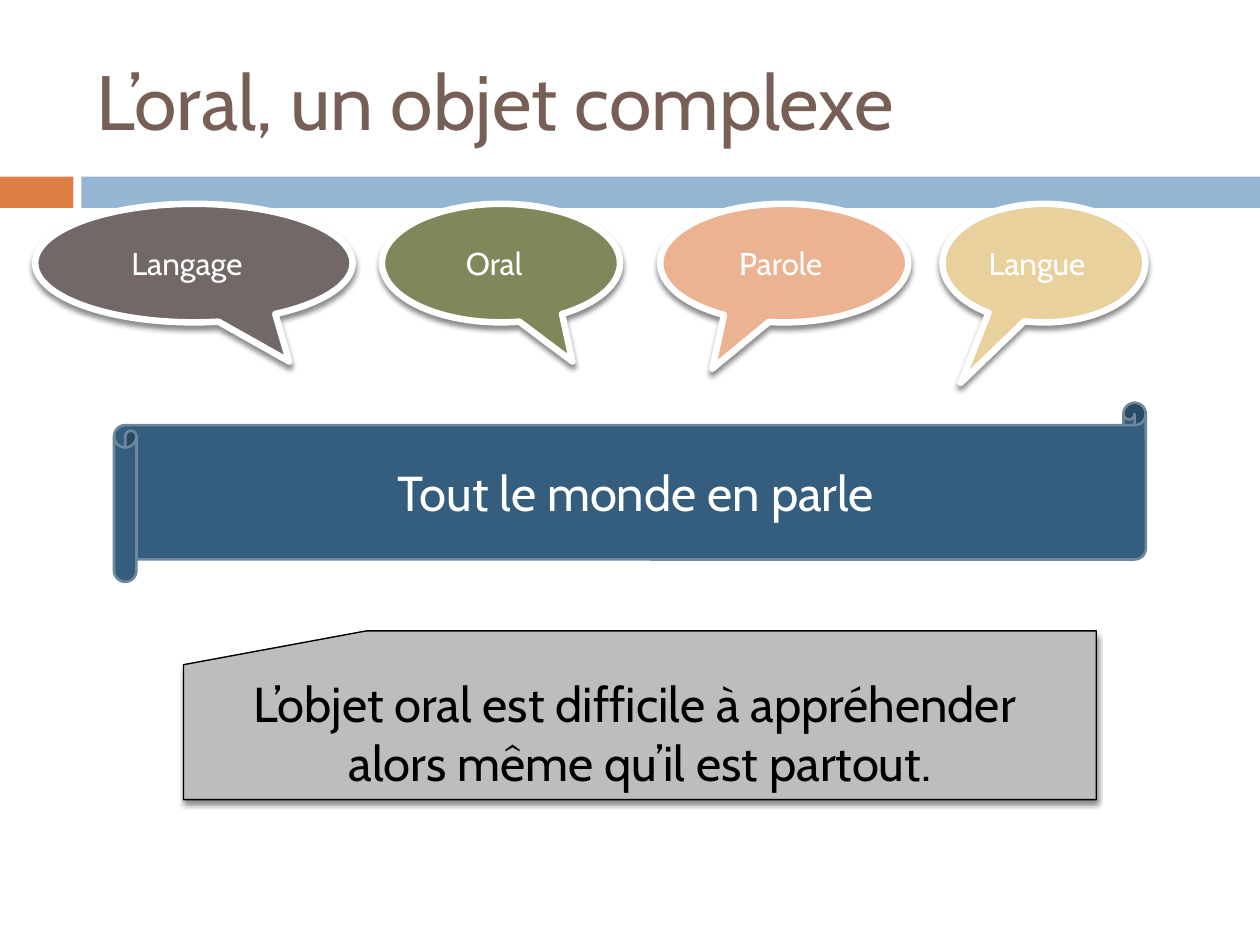
from dataclasses import dataclass

import pptx
import pptx.dml.color
import pptx.enum.shapes
import pptx.enum.text
import pptx.oxml
import pptx.oxml.ns
import pptx.util

Cm, Pt = pptx.util.Cm, pptx.util.Pt
MSO = pptx.enum.shapes.MSO_SHAPE
ALIGN = pptx.enum.text.PP_ALIGN
FONT = "Cabin"
WHITE, BLACK = "FFFFFF", "000000"

CALLOUT_TOP, CALLOUT_HEIGHT = 4.11, 2.39

SHADOW = (
    f'<a:outerShdw {pptx.oxml.ns.nsdecls("a")} blurRad="38100" dist="30480" '
    'dir="5400000" rotWithShape="0"><a:srgbClr val="000000">'
    '<a:alpha val="45000"/></a:srgbClr></a:outerShdw>'
)


@dataclass
class Callout:
    text: str
    left: float
    width: float
    color: str
    tip: tuple[float, float]
    right_inset: float = 0.53


CALLOUTS = [
    Callout("Langue", 19.0, 4.09, "E8D19D", (-0.41, 1.01)),
    Callout("Oral", 7.7, 4.8, "81875A", (0.3, 0.83)),
    Callout("Parole", 13.31, 5.0, "EBB391", (-0.29, 0.89), 0.39),
    Callout("Langage", 0.71, 6.4, "726868", (0.3, 0.83)),
]


def rgb(color: str):
    return pptx.dml.color.RGBColor.from_string(color)


def add_shape(s, kind, left: float, top: float, width: float, height: float,
              fill: str, line: str | None = None, line_width: float = 1,
              shadow: bool = False):
    sp = s.shapes.add_shape(kind, Cm(left), Cm(top), Cm(width), Cm(height))
    sp.fill.solid()
    sp.fill.fore_color.rgb = rgb(fill)
    if line:
        sp.line.color.rgb = rgb(line)
        sp.line.width = Pt(line_width)
    else:
        sp.line.fill.background()
    sp.shadow.inherit = False
    if shadow:
        effects = sp._element.spPr.find(pptx.oxml.ns.qn("a:effectLst"))
        effects.append(pptx.oxml.parse_xml(SHADOW))
    return sp


def write(sp, text: str, size: float, color: str, align=ALIGN.CENTER) -> None:
    tf = sp.text_frame
    tf.word_wrap = True
    tf.vertical_anchor = pptx.enum.text.MSO_ANCHOR.MIDDLE
    tf.text = text
    for p in tf.paragraphs:
        p.alignment = align
        for r in p.runs:
            r.font.name = FONT
            r.font.size = Pt(size)
            r.font.color.rgb = rgb(color)


def add_callout(s, callout: Callout) -> None:
    sp = add_shape(s, MSO.OVAL_CALLOUT, callout.left, CALLOUT_TOP, callout.width,
                   CALLOUT_HEIGHT, callout.color, WHITE, 3.75, shadow=True)
    for i, value in enumerate(callout.tip):
        sp.adjustments[i] = value
    write(sp, callout.text, 18, WHITE)
    sp.text_frame.margin_right = Cm(callout.right_inset)


def main() -> None:
    prs = pptx.Presentation()
    prs.slide_width, prs.slide_height = Cm(25.4), Cm(19.05)
    s = prs.slides.add_slide(prs.slide_layouts[6])

    # Two-colour band under the title
    add_shape(s, MSO.RECTANGLE, 0, 3.56, 1.48, 0.63, "DD8047")
    add_shape(s, MSO.RECTANGLE, 1.64, 3.56, 23.76, 0.63, "94B6D2")

    # Title
    title = s.shapes.add_textbox(Cm(1.7), Cm(0.64), Cm(22.66), Cm(2.74))
    write(title, "L’oral, un objet complexe", 44, "775F55", ALIGN.LEFT)

    # Speech bubbles
    for callout in CALLOUTS:
        add_callout(s, callout)

    # Scroll
    scroll = add_shape(s, MSO.HORIZONTAL_SCROLL, 2.3, 8.12, 20.8, 3.61,
                       "355D7E", "6D879B", 1.5)
    write(scroll, "Tout le monde en parle", 28, WHITE)

    # Conclusion card
    card = add_shape(s, MSO.FLOWCHART_CARD, 3.7, 12.72, 18.4, 3.4,
                     "BDBDBD", BLACK, 0.79, shadow=True)
    write(card, "L’objet oral est difficile à appréhender \n"
                "alors même qu’il est partout.", 28, BLACK)

    prs.save("out.pptx")


if __name__ == "__main__":
    main()
